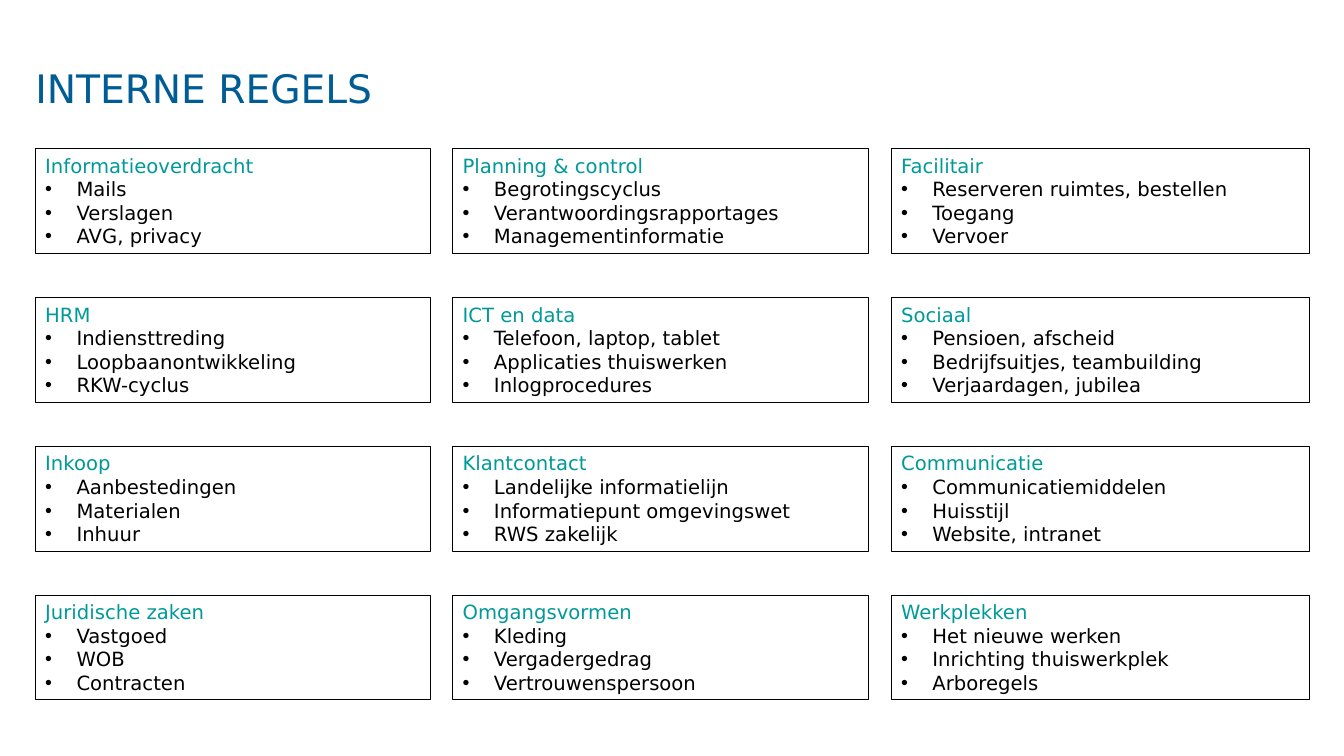
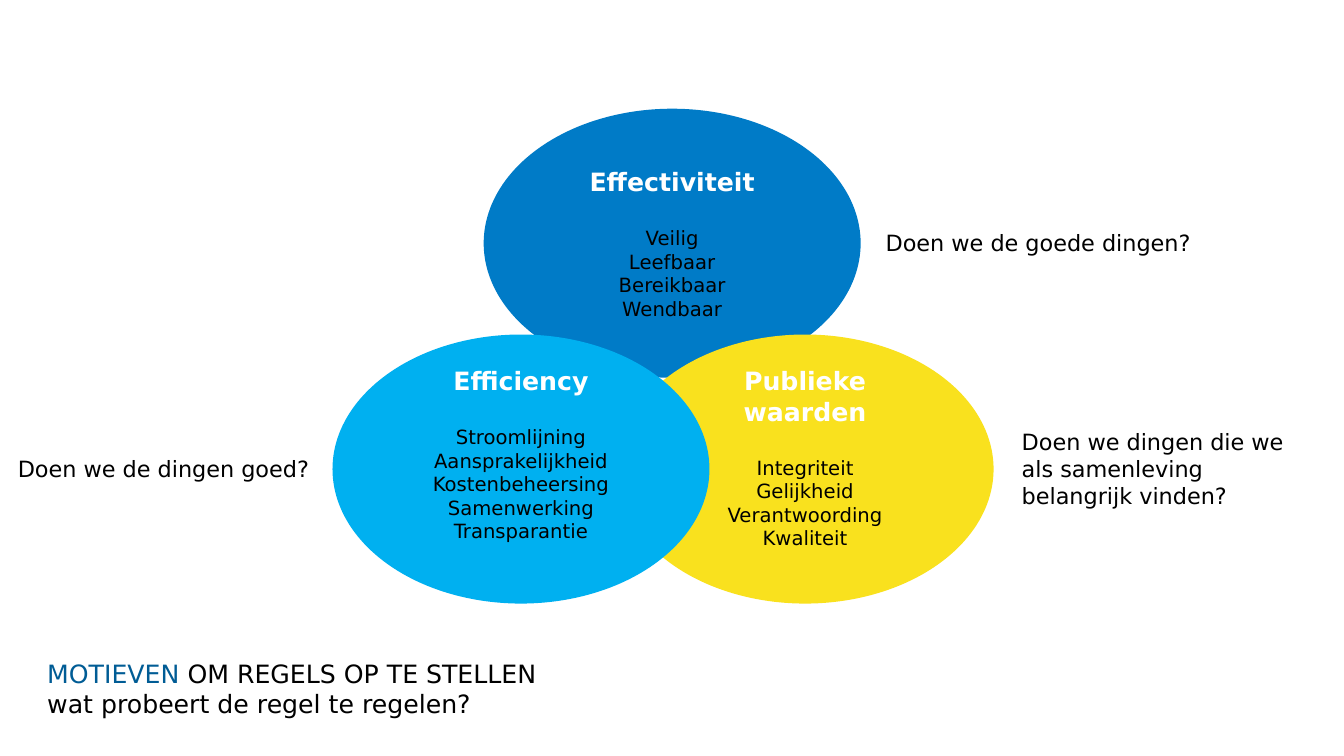
"""Builds two slides about internal rules and the motives behind them."""
from dataclasses import dataclass

from lxml import etree
from pptx import Presentation
from pptx.dml.color import RGBColor
from pptx.enum.shapes import MSO_SHAPE
from pptx.enum.text import MSO_ANCHOR, MSO_AUTO_SIZE, PP_ALIGN
from pptx.oxml.ns import qn
from pptx.util import Cm, Pt

RECTANGLE, ELLIPSE = MSO_SHAPE.RECTANGLE, MSO_SHAPE.OVAL
TOP, MIDDLE = MSO_ANCHOR.TOP, MSO_ANCHOR.MIDDLE
LEFT, CENTER = PP_ALIGN.LEFT, PP_ALIGN.CENTER
FIXED_SIZE = MSO_AUTO_SIZE.NONE
TITLE_ONLY = 5


@dataclass(frozen=True)
class Theme:
    """Colours, font and type sizes shared by the slides."""

    font: str = "DejaVu Sans"
    title: RGBColor = RGBColor(0x00, 0x5C, 0x95)
    heading: RGBColor = RGBColor(0x00, 0x99, 0x99)
    text: RGBColor = RGBColor(0x00, 0x00, 0x00)
    light: RGBColor = RGBColor(0xFF, 0xFF, 0xFF)
    blue: RGBColor = RGBColor(0x00, 0x7B, 0xC7)
    yellow: RGBColor = RGBColor(0xF9, 0xE1, 0x1E)
    cyan: RGBColor = RGBColor(0x00, 0xB0, 0xF0)
    title_size: int = 28
    large_size: int = 18
    question_size: int = 16
    body_size: int = 14


THEME = Theme()

RULE_COLUMNS = [
    (9.96, [
        ("Informatieoverdracht", ["Mails", "Verslagen", "AVG, privacy"]),
        ("HRM", ["Indiensttreding", "Loopbaanontwikkeling", "RKW-cyclus"]),
        ("Inkoop", ["Aanbestedingen", "Materialen", "Inhuur"]),
        ("Juridische zaken", ["Vastgoed", "WOB", "Contracten"]),
    ]),
    (10.49, [
        ("Planning & control",
         ["Begrotingscyclus", "Verantwoordingsrapportages", "Managementinformatie"]),
        ("ICT en data",
         ["Telefoon, laptop, tablet", "Applicaties thuiswerken", "Inlogprocedures"]),
        ("Klantcontact",
         ["Landelijke informatielijn", "Informatiepunt omgevingswet", "RWS zakelijk"]),
        ("Omgangsvormen", ["Kleding", "Vergadergedrag", "Vertrouwenspersoon"]),
    ]),
    (10.54, [
        ("Facilitair", ["Reserveren ruimtes, bestellen", "Toegang", "Vervoer"]),
        ("Sociaal",
         ["Pensioen, afscheid", "Bedrijfsuitjes, teambuilding", "Verjaardagen, jubilea"]),
        ("Communicatie", ["Communicatiemiddelen", "Huisstijl", "Website, intranet"]),
        ("Werkplekken",
         ["Het nieuwe werken", "Inrichting thuiswerkplek", "Arboregels"]),
    ]),
]

MOTIVES = [
    ("Effectiviteit", ["Veilig", "Leefbaar", "Bereikbaar", "Wendbaar"],
     THEME.blue, 12.19, 2.74, 0.13),
    ("Publieke waarden",
     ["Integriteit", "Gelijkheid", "Verantwoording", "Kwaliteit"],
     THEME.yellow, 15.54, 8.43, 0.7),
    ("Efficiency",
     ["Stroomlijning", "Aansprakelijkheid", "Kostenbeheersing", "Samenwerking",
      "Transparantie"],
     THEME.cyan, 8.38, 8.43, 0.87),
]

QUESTIONS = [
    (["Doen we de goede dingen?"], (22.07, 5.66, 8.28, 0.94)),
    (["Doen we de dingen goed?"], (0.2, 11.35, 7.95, 0.94)),
    (["Doen we dingen die we", "als samenleving belangrijk vinden?"],
     (25.5, 10.67, 7.7, 2.31)),
]


def format_run(run, size, color, bold=False):
    """Give a run the shared font with a size and colour."""
    run.font.name = THEME.font
    run.font.size = Pt(size)
    run.font.bold = bold
    run.font.color.rgb = color


def format_paragraph(paragraph, size, color, alignment=LEFT, bold=False):
    """Align a paragraph and format all its runs."""
    paragraph.alignment = alignment
    for run in paragraph.runs:
        format_run(run, size, color, bold)


def add_bullet(paragraph):
    """Give a paragraph a round bullet with a hanging indent."""
    properties = paragraph._p.get_or_add_pPr()
    properties.set("marL", str(Cm(0.79)))
    properties.set("indent", str(-Cm(0.79)))
    etree.SubElement(properties, qn("a:buFont")).set("typeface", "Arial")
    etree.SubElement(properties, qn("a:buChar")).set("char", "•")


def add_panel(slide, preset, box, anchor):
    """Add a preset shape without shadow or line and return it."""
    shape = slide.shapes.add_shape(preset, *map(Cm, box))
    shape.shadow.inherit = False
    shape.line.fill.background()
    shape.text_frame.word_wrap = True
    shape.text_frame.vertical_anchor = anchor
    return shape


def place_title(slide, box, lines, size, line_spacing=1.0, inset=(0, 0)):
    """Fill the title placeholder with lines of coloured runs."""
    title = slide.shapes.title
    title.left, title.top, title.width, title.height = map(Cm, box)
    frame = title.text_frame
    frame.auto_size = FIXED_SIZE
    frame.word_wrap = True
    frame.vertical_anchor = TOP
    frame.margin_left = frame.margin_right = Cm(inset[0])
    frame.margin_top = frame.margin_bottom = Cm(inset[1])
    frame.text = "\n".join("" for _ in lines)
    for paragraph, runs in zip(frame.paragraphs, lines):
        paragraph.alignment = LEFT
        paragraph.line_spacing = line_spacing
        for text, color in runs:
            run = paragraph.add_run()
            run.text = text
            format_run(run, size, color)


def add_rule_card(slide, box, heading, items):
    """Add an outlined card with a heading and bulleted items."""
    card = add_panel(slide, RECTANGLE, box, TOP)
    card.fill.background()
    card.line.color.rgb = THEME.text
    card.line.width = Pt(0.75)
    card.text_frame.text = "\n".join([heading, *items])
    heading_paragraph, *item_paragraphs = card.text_frame.paragraphs
    format_paragraph(heading_paragraph, THEME.body_size, THEME.heading)
    for paragraph in item_paragraphs:
        add_bullet(paragraph)
        format_paragraph(paragraph, THEME.body_size, THEME.text)


def add_rule_grid(slide, left, top, row_pitch, card_height, gap):
    """Place the columns of cards side by side with equal gaps."""
    for width, cards in RULE_COLUMNS:
        for row, (heading, items) in enumerate(cards):
            box = (left, top + row * row_pitch, width, card_height)
            add_rule_card(slide, box, heading, items)
        left += width + gap


def add_motive(slide, box, heading, items, color, bottom_inset):
    """Add a filled ellipse with a bold heading and centred items."""
    ellipse = add_panel(slide, ELLIPSE, box, MIDDLE)
    ellipse.fill.solid()
    ellipse.fill.fore_color.rgb = color
    frame = ellipse.text_frame
    frame.margin_bottom = Cm(bottom_inset)
    frame.text = "\n".join([heading, *items])
    heading_paragraph, *item_paragraphs = frame.paragraphs
    format_paragraph(heading_paragraph, THEME.large_size, THEME.light, CENTER, True)
    for paragraph in item_paragraphs:
        format_paragraph(paragraph, THEME.body_size, THEME.text, CENTER)
    item_paragraphs[0].space_before = Pt(21)


def add_question(slide, box, lines):
    """Add a text box with the question beside an ellipse."""
    frame = slide.shapes.add_textbox(*map(Cm, box)).text_frame
    frame.word_wrap = True
    frame.text = "\n".join(lines)
    for paragraph in frame.paragraphs:
        format_paragraph(paragraph, THEME.question_size, THEME.text)


def build_rules_slide(slide):
    """Build the overview of internal rules."""
    place_title(slide, (0.89, 1.75, 30.38, 1.52),
                [[("INTERNE REGELS", THEME.title)]], THEME.title_size, 0.9)
    add_rule_grid(slide, left=0.89, top=3.75, row_pitch=3.75, card_height=2.64,
                  gap=0.56)


def build_motives_slide(slide):
    """Build the three overlapping motives with their questions."""
    for lines, box in QUESTIONS:
        add_question(slide, box, lines)
    for heading, items, color, left, top, bottom_inset in MOTIVES:
        add_motive(slide, (left, top, 9.5, 6.78), heading, items, color, bottom_inset)
    title_lines = [
        [("MOTIEVEN", THEME.title), (" OM REGELS OP TE STELLEN", THEME.text)],
        [("wat probeert de regel te regelen?", THEME.text)],
    ]
    place_title(slide, (0.94, 16.46, 13.28, 1.8), title_lines, THEME.large_size,
                inset=(0.25, 0.13))


def main():
    """Create the presentation and save it."""
    presentation = Presentation()
    presentation.slide_width = Cm(33.87)
    presentation.slide_height = Cm(19.05)
    layout = presentation.slide_layouts[TITLE_ONLY]
    for build_slide in (build_rules_slide, build_motives_slide):
        build_slide(presentation.slides.add_slide(layout))
    presentation.save("out.pptx")


if __name__ == "__main__":
    main()
